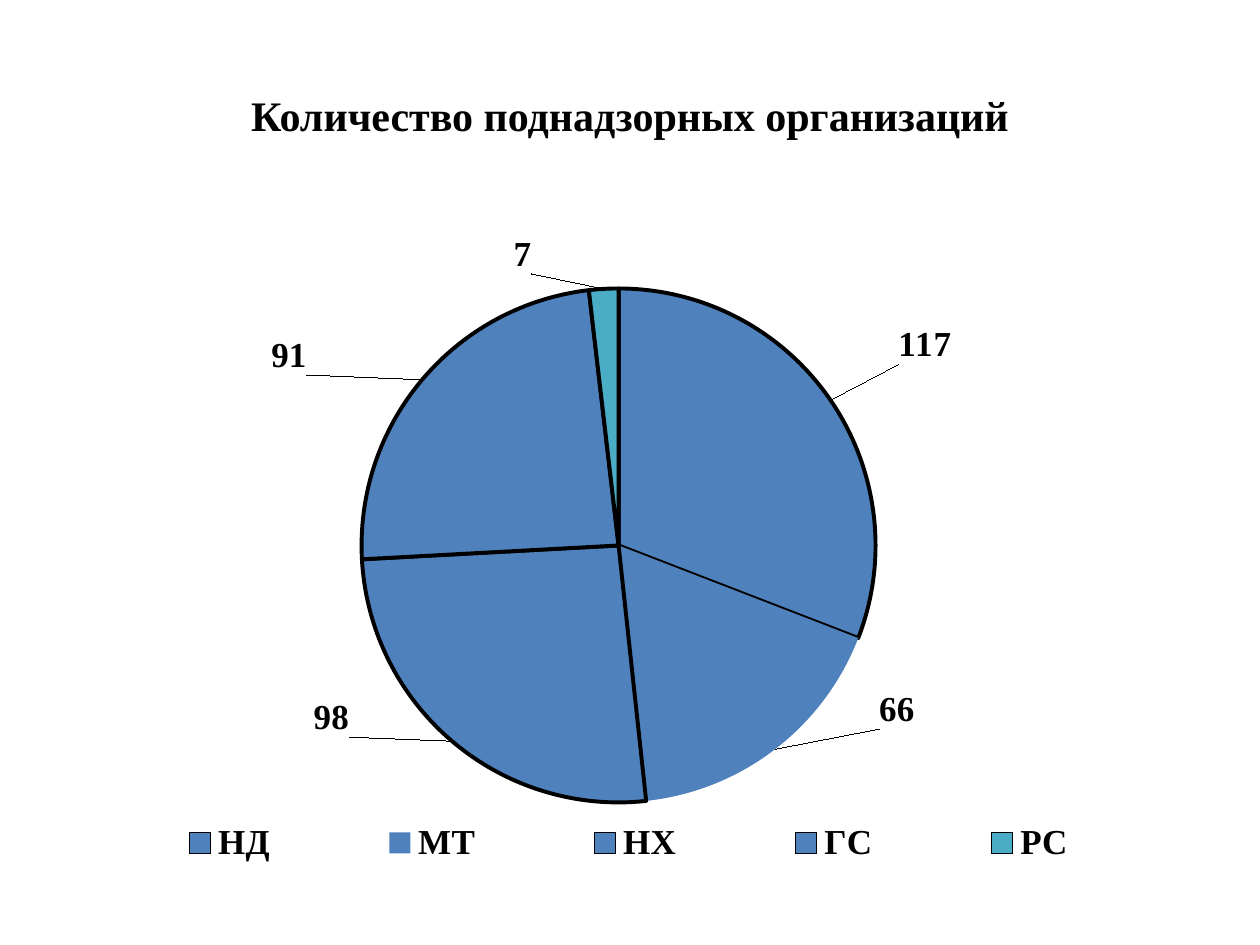
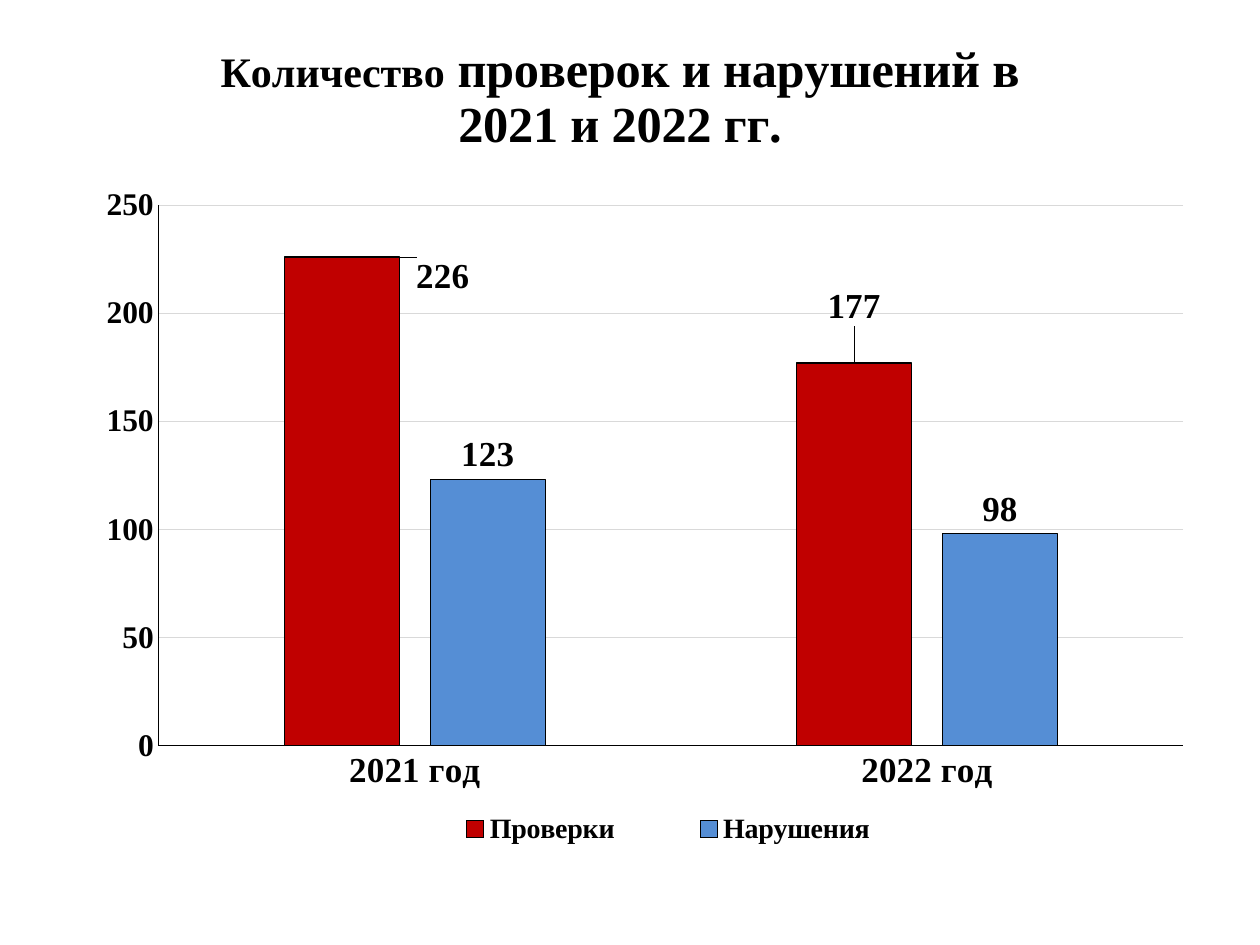
from lxml import etree
from pptx import Presentation
from pptx import util as u
from pptx.chart.data import CategoryChartData
from pptx.dml import color as dml
from pptx.enum import chart as ch, text
from pptx.oxml import ns

EMU_PER_PX = 9144
FONT = "Times New Roman"
BLACK, GRID, BLUE, TEAL, RED, SKY = "000000", "D9D9D9", "4F81BD", "4BACC6", "C00000", "558ED5"


def px(length):
    """Turn px into EMU."""
    return u.Emu(length * EMU_PER_PX)


def rgb(value):
    """Turn a hex string into a colour."""
    return dml.RGBColor.from_string(value)


class Deck:
    """Holds the shared style and the current slide."""

    def __init__(self, width, height):
        """Start an empty presentation of the given size."""
        self.prs = Presentation()
        self.prs.slide_width, self.prs.slide_height = px(width), px(height)

    def add_slide(self, layout):
        """Make a new slide the current one."""
        self.slide = self.prs.slides.add_slide(self.prs.slide_layouts[layout])

    def style(self, font, size):
        """Apply the bold black type of the deck."""
        font.name, font.size, font.bold = FONT, u.Pt(size), True
        font.color.rgb = rgb(BLACK)

    def outline(self, line, colour=BLACK, width=0.75):
        """Draw a solid line."""
        line.color.rgb, line.width = rgb(colour), u.Pt(width)

    def title(self, wording, box, bottom_inset):
        """Fill and place the title placeholder."""
        heading = self.slide.shapes.title
        heading.left, heading.top, heading.width, heading.height = map(px, box)
        frame = heading.text_frame
        frame.text = wording
        frame.vertical_anchor = text.MSO_ANCHOR.MIDDLE
        frame.margin_bottom = px(bottom_inset)
        frame.paragraphs[0].alignment = text.PP_ALIGN.CENTER
        self.style(frame.paragraphs[0].font, 24)

    def chart(self, kind, frame, categories, series, plot_box, legend_box, legend_size):
        """Add a chart with its plot area and bottom legend in place."""
        data = CategoryChartData()
        data.categories = categories
        for name, values in series.items():
            data.add_series(name, values)
        self.frame = frame
        chart = self.slide.shapes.add_chart(kind, *map(px, frame), data).chart
        self.style(chart.font, 18)
        chart.has_title = False
        chart.has_legend = True
        chart.legend.position = ch.XL_LEGEND_POSITION.BOTTOM
        chart.legend.include_in_layout = False
        self.style(chart.legend.font, legend_size)
        self.place(chart.legend._element, 1, legend_box)
        self.place(chart._chartSpace.chart.plotArea, 0, plot_box, target="inner")
        return chart

    def place(self, part, index, box, target=None, offset=False):
        """Give a chart part a manual layout, in px of the chart frame."""
        for old in part.findall(ns.qn("c:layout")):
            part.remove(old)
        layout = etree.Element(ns.qn("c:layout"))
        manual = etree.SubElement(layout, ns.qn("c:manualLayout"))
        settings = [("layoutTarget", target)] if target else []
        if not offset:
            settings += [("xMode", "edge"), ("yMode", "edge")]
        settings += [(key, f"{length / whole:.4f}")
                     for key, length, whole in zip("xywh", box, self.frame[2:] * 2)]
        for tag, value in settings:
            etree.SubElement(manual, ns.qn(f"c:{tag}")).set("val", value)
        part.insert(index, layout)

    def labels(self, series, offsets=()):
        """Show values, shifting the points that have an offset."""
        labels = series.data_labels
        labels.show_value = True
        labels.position = ch.XL_LABEL_POSITION.OUTSIDE_END
        self.style(labels.font, 20)
        for index, _ in enumerate(offsets):
            label = series.points[index].data_label
            self.style(label.font, 20)
            label.position = ch.XL_LABEL_POSITION.OUTSIDE_END
        for label, shift in zip(series._element.xpath(".//c:dLbl"), offsets):
            self.place(label, 1, shift, offset=True)

    def axis(self, axis, size):
        """Style an axis without tick marks."""
        self.style(axis.tick_labels.font, size)
        self.outline(axis.format.line)
        axis.major_tick_mark = axis.minor_tick_mark = ch.XL_TICK_MARK.NONE

    def chart_title(self, chart, runs, corner):
        """Write a chart title from runs of different sizes."""
        chart.has_title = True
        chart.chart_title.include_in_layout = False
        paragraph = chart.chart_title.text_frame.paragraphs[0]
        for wording, size in runs:
            run = paragraph.add_run()
            run.text = wording
            self.style(run.font, size)
        self.place(chart.chart_title._element, 1, corner)


def organisations(deck):
    """Build the slide on supervised organisations."""
    deck.add_slide(5)
    deck.title("Количество поднадзорных организаций", (50, 30, 900, 148), 31)
    pie = deck.chart(ch.XL_CHART_TYPE.PIE, (51, 178, 900, 535),
                     ["НД", "МТ", "НХ", "ГС", "РС"], {"Series 1": [117, 66, 98, 91, 7]},
                     (236, 51, 408, 408), (14, 464, 868, 54), 20)
    pie.plots[0].vary_by_categories = True
    counts = pie.plots[0].series[0]
    for index, colour in enumerate([BLUE] * 4 + [TEAL]):
        sector = counts.points[index].format
        sector.fill.solid()
        sector.fill.fore_color.rgb = rgb(colour)
        if index == 1:
            sector.line.fill.background()
        else:
            deck.outline(sector.line, width=2.25)
    deck.labels(counts, [(49, -25), (79, -52), (-78, -39), (-87, 0), (-64, -6)])


def inspections(deck):
    """Build the slide on inspections and violations."""
    deck.add_slide(6)
    columns = deck.chart(ch.XL_CHART_TYPE.COLUMN_CLUSTERED, (67, 21, 890, 661),
                         ["2021 год", "2022 год"],
                         {"Проверки": [226, 177], "Нарушения": [123, 98]},
                         (59, 142, 813, 429), (243, 614, 441, 46), 16)
    deck.chart_title(columns, [("Количество", 24),
                               (" проверок и нарушений в 2021 и 2022 гг.", 28.8)], (105, 8))
    plot = columns.plots[0]
    plot.vary_by_categories = False
    plot.gap_width, plot.overlap = 219, -27
    for series, colour, offsets in zip(plot.series, (RED, SKY), ([(80, 35), (0, -25)], [])):
        series.format.fill.solid()
        series.format.fill.fore_color.rgb = rgb(colour)
        deck.outline(series.format.line)
        deck.labels(series, offsets)
    deck.axis(columns.category_axis, 20)
    scale = columns.value_axis
    deck.axis(scale, 18)
    scale.minimum_scale, scale.maximum_scale, scale.major_unit = 0, 250, 50
    deck.outline(scale.major_gridlines.format.line, GRID)


def main():
    """Build and save the presentation."""
    deck = Deck(1000, 750)
    organisations(deck)
    inspections(deck)
    deck.prs.save("out.pptx")


if __name__ == "__main__":
    main()
